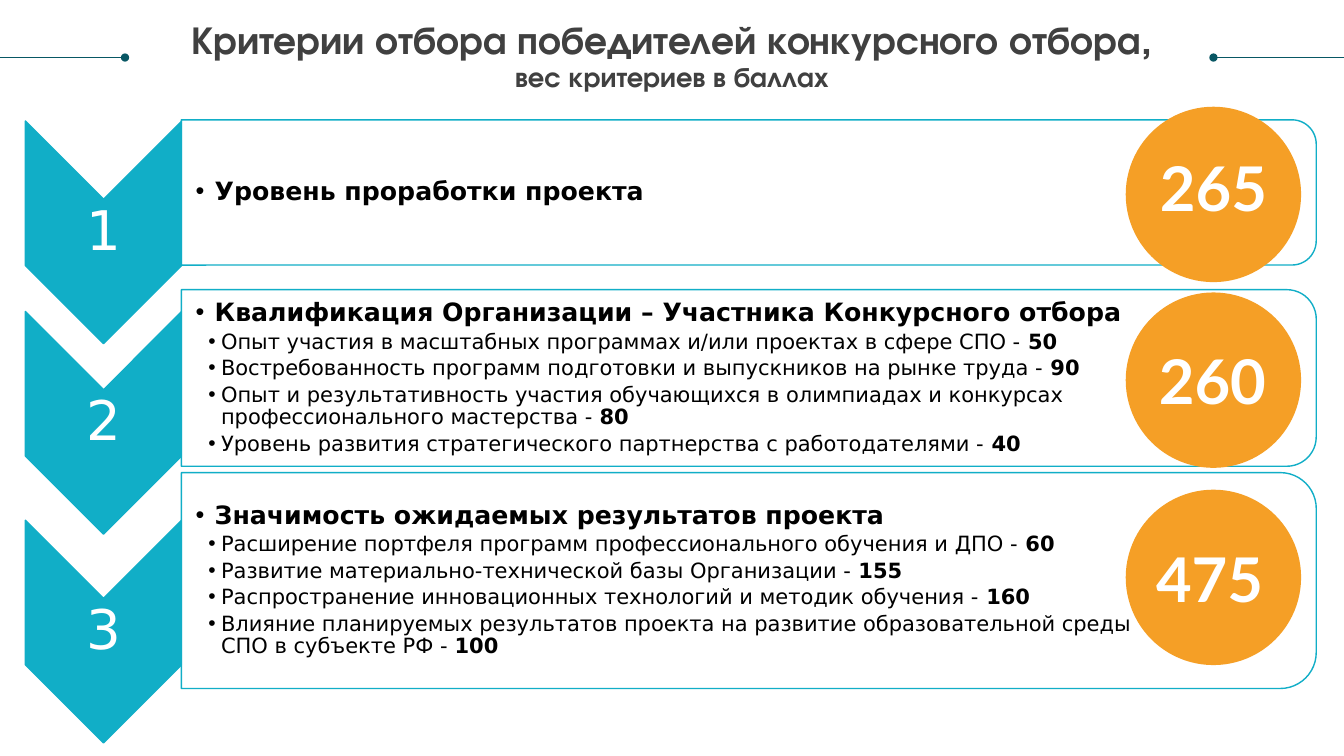
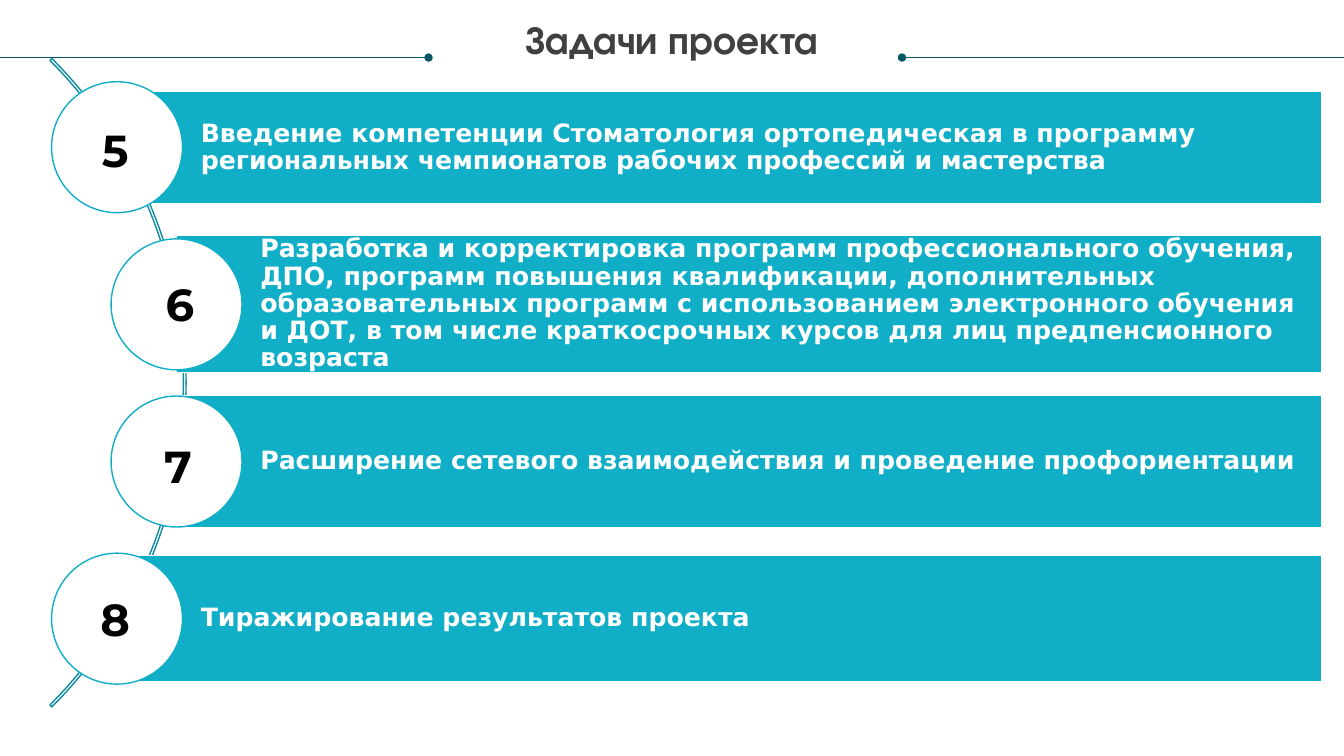
"""Build two slides: contest criteria with scores, and project tasks."""
from dataclasses import dataclass

from lxml import etree
from pptx import Presentation
from pptx.dml.color import RGBColor
from pptx.enum.shapes import MSO_CONNECTOR, MSO_SHAPE
from pptx.enum.text import MSO_ANCHOR, MSO_AUTO_SIZE, PP_ALIGN
from pptx.oxml.ns import qn
from pptx.util import Cm, Pt

CHEVRON = MSO_SHAPE.CHEVRON
PANEL = MSO_SHAPE.ROUND_2_SAME_RECTANGLE
OVAL = MSO_SHAPE.OVAL
ARC = MSO_SHAPE.BLOCK_ARC
STRAIGHT = MSO_CONNECTOR.STRAIGHT
TOP, MIDDLE = MSO_ANCHOR.TOP, MSO_ANCHOR.MIDDLE
LEFT, CENTER = PP_ALIGN.LEFT, PP_ALIGN.CENTER
NO_FIT = MSO_AUTO_SIZE.NONE

TEAL, DEEP, DARK = "11AEC7", "0E8B9F", "085764"
ORANGE, GRAY, WHITE, BLACK = "F59F26", "404040", "FFFFFF", "000000"
HEAD, BODY, SCORE, DIGIT = "TeX Gyre Adventor", "DejaVu Sans", "Lato", "Montserrat"

WIDTH, HEIGHT = 33.87, 19.05
RULE_Y = 1.45
ARROW_X, ARROW_W, ARROW_H = 0.64, 3.94, 5.61
PANEL_X, PANEL_W = 4.57, 28.6
DISC_X, DISC_D = 28.37, 4.42
BAR_END = 33.3
RING_D, RING_Y, RING_STEP = 3.3, 2.06, 3.96


@dataclass(frozen=True)
class Box:
    x: float
    y: float
    w: float
    h: float

    def turned(self) -> "Box":
        return Box(self.x + (self.w - self.h) / 2, self.y + (self.h - self.w) / 2, self.h, self.w)


@dataclass(frozen=True)
class Style:
    font: str
    size: float
    color: str
    bold: bool = True


@dataclass(frozen=True)
class Group:
    title: str
    score: str
    arrow_y: float
    top: float
    height: float
    disc_y: float
    score_x: float
    score_y: float
    items: tuple[tuple[str, str], ...] = ()


@dataclass(frozen=True)
class Task:
    digit: str
    text: str
    left: float
    top: float
    height: float
    digit_x: float
    digit_y: float


GROUPS = (
    Group("Уровень проработки проекта", "265", 3.05, 3.02, 3.66, 2.69, 28.68, 3.78),
    Group("Квалификация Организации – Участника Конкурсного отбора", "260",
          7.85, 7.3, 4.45, 7.37, 28.65, 8.64, (
              ("Опыт участия в масштабных программах и/или проектах в сфере СПО - ", "50"),
              ("Востребованность программ подготовки и выпускников на рынке труда - ", "90"),
              ("Опыт и результативность участия обучающихся в олимпиадах и конкурсах\n"
               "профессионального мастерства - ", "80"),
              ("Уровень развития стратегического партнерства с работодателями - ", "40"))),
    Group("Значимость ожидаемых результатов проекта", "475",
          13.11, 11.91, 5.44, 12.34, 28.58, 13.61, (
              ("Расширение портфеля программ профессионального обучения и ДПО - ", "60"),
              ("Развитие материально-технической базы Организации - ", "155"),
              ("Распространение инновационных технологий и методик обучения - ", "160"),
              ("Влияние планируемых результатов проекта на развитие образовательной среды\n"
               "СПО в субъекте РФ - ", "100"))),
)

TASKS = (
    Task("5", "Введение компетенции Стоматология ортопедическая в программу региональных "
         "чемпионатов рабочих профессий и мастерства", 2.95, 2.31, 2.82, 2.27, 2.95),
    Task("6", "Разработка и корректировка программ профессионального обучения, ДПО, программ "
         "повышения квалификации, дополнительных образовательных программ с использованием "
         "электронного обучения и ДОТ, в том числе краткосрочных курсов для лиц "
         "предпенсионного возраста", 4.45, 5.94, 3.45, 3.9, 6.83),
    Task("7", "Расширение сетевого взаимодействия и проведение профориентации",
         4.45, 9.96, 3.35, 3.85, 10.92),
    Task("8", "Тиражирование результатов проекта", 2.95, 14, 3.18, 2.27, 14.78),
)


def tint(target, color: str) -> None:
    target.solid()
    target.fore_color.rgb = RGBColor.from_string(color)


def place(shape, box: Box) -> None:
    shape.left, shape.top = Cm(box.x), Cm(box.y)
    shape.width, shape.height = Cm(box.w), Cm(box.h)


def frame(shape, anchor, left: float = 0, pad: float = 0):
    text = shape.text_frame
    text.word_wrap = True
    text.auto_size = NO_FIT
    text.vertical_anchor = anchor
    text.margin_left = Cm(left)
    text.margin_top = text.margin_right = text.margin_bottom = Cm(pad)
    return text


def dress(para, style: Style, align=LEFT, spacing: float = 0.9, after: float = 0) -> None:
    para.alignment = align
    para.line_spacing = spacing
    para.space_before, para.space_after = Pt(0), Pt(after)
    font = para.font
    font.name, font.size, font.bold = style.font, Pt(style.size), style.bold
    font.color.rgb = RGBColor.from_string(style.color)


def bullet(para, margin: float, hang: float) -> None:
    props = para._p.get_or_add_pPr()
    props.set("marL", str(Cm(margin)))
    props.set("indent", str(-Cm(hang)))
    mark = etree.Element(qn("a:buChar" if hang else "a:buNone"))
    if hang:
        mark.set("char", "•")
    font = props.find(qn("a:defRPr"))
    font.addprevious(mark)


def draw(slide, kind, box: Box, fill: str | None = None, line: str | None = None,
         turn: bool = False):
    spot = box.turned() if turn else box
    shape = slide.shapes.add_shape(kind, Cm(spot.x), Cm(spot.y), Cm(spot.w), Cm(spot.h))
    shape.shadow.inherit = False
    if turn:
        shape.rotation = 90
    if fill:
        tint(shape.fill, fill)
    else:
        shape.fill.background()
    if line:
        tint(shape.line.fill, line)
        shape.line.width = Pt(1)
    else:
        shape.line.fill.background()
    return shape


def label(slide, text: str, box: Box, style: Style, spacing: float = 1) -> None:
    area = slide.shapes.add_textbox(Cm(box.x), Cm(box.y), Cm(box.w), Cm(box.h))
    para = frame(area, MIDDLE).paragraphs[0]
    para.text = text
    dress(para, style, CENTER, spacing)


def lift(shape) -> None:
    shape.element.getparent().append(shape.element)


def rule(slide, edge: float, dot: float) -> None:
    line = slide.shapes.add_connector(STRAIGHT, Cm(edge), Cm(RULE_Y), Cm(dot), Cm(RULE_Y))
    tint(line.line.fill, DARK)
    line.line.width = Pt(0.5)
    props = line.element.spPr
    etree.SubElement(props.find(qn("a:ln")), qn("a:tailEnd"), type="oval")
    etree.SubElement(props, qn("a:effectLst"))


def start(deck, lines: tuple[tuple[str, int], ...], left: float, right: float):
    slide = deck.slides.add_slide(deck.slide_layouts.get_by_name("Comparison"))
    title = slide.shapes.title
    place(title, Box(0.64, 0.53, 32.59, 1.07 * len(lines)))
    text = frame(title, TOP)
    for spot, (words, size) in enumerate(lines):
        para = text.add_paragraph() if spot else text.paragraphs[0]
        para.text = words
        dress(para, Style(HEAD, size, GRAY), CENTER)
    rule(slide, 0, left)
    rule(slide, WIDTH, right)
    return slide, [hold for hold in slide.placeholders if hold.placeholder_format.idx]


def fill_list(hold, group: Group) -> None:
    text = frame(hold, MIDDLE, 0.36, 0.03)
    para = text.paragraphs[0]
    para.text = group.title
    dress(para, Style(BODY, 18, BLACK), after=2.7)
    bullet(para, 0.48, 0.48)
    for words, score in group.items:
        para = text.add_paragraph()
        para.level = 1
        for spot, part in enumerate(words.split("\n")):
            if spot:
                para.add_line_break()
            para.add_run().text = part
        run = para.add_run()
        run.text = score
        run.font.bold = True
        dress(para, Style(BODY, 15, BLACK, False), after=2.7)
        bullet(para, 0.64, 0.32)


def add_group(slide, hold, number: int, group: Group) -> None:
    arrow = Box(ARROW_X, group.arrow_y, ARROW_W, ARROW_H)
    draw(slide, CHEVRON, arrow, TEAL, TEAL, True)
    label(slide, str(number), arrow, Style(BODY, 39, WHITE, False), 0.9)
    panel = draw(slide, PANEL, Box(PANEL_X, group.top, PANEL_W, group.height), WHITE, TEAL, True)
    color = panel.element.spPr.find(qn("a:solidFill")).find(qn("a:srgbClr"))
    etree.SubElement(color, qn("a:alpha"), val="90000")
    inset = group.height * 0.05
    place(hold, Box(PANEL_X, group.top + inset, PANEL_W - inset, group.height - 2 * inset))
    fill_list(hold, group)
    lift(hold)
    draw(slide, OVAL, Box(DISC_X, group.disc_y, DISC_D, DISC_D), ORANGE)
    label(slide, group.score, Box(group.score_x, group.score_y, 3.81, 1.88),
          Style(SCORE, 44, WHITE))


def add_task(slide, hold, row: int, task: Task) -> None:
    place(hold, Box(task.left, task.top, BAR_END - task.left, task.height))
    tint(hold.fill, TEAL)
    tint(hold.line.fill, WHITE)
    hold.line.width = Pt(1)
    para = frame(hold, MIDDLE, 2.11, 0.13).paragraphs[0]
    para.text = task.text
    dress(para, Style(BODY, 18, WHITE))
    bullet(para, 0, 0)
    lift(hold)
    ring = Box(task.left - RING_D / 2, RING_Y + row * RING_STEP, RING_D, RING_D)
    draw(slide, OVAL, ring, WHITE, TEAL)
    label(slide, task.digit, Box(task.digit_x, task.digit_y, 1.27, 1.63),
          Style(DIGIT, 32, BLACK))


def main() -> None:
    deck = Presentation()
    deck.slide_width, deck.slide_height = Cm(WIDTH), Cm(HEIGHT)

    slide, holds = start(deck, (("Критерии отбора победителей конкурсного отбора,", 28),
                                ("вес критериев в баллах", 20)), 3.15, 30.58)
    for number, (hold, group) in enumerate(zip(holds, GROUPS), 1):
        add_group(slide, hold, number, group)
    for hold in holds[len(GROUPS):]:
        hold.element.getparent().remove(hold.element)

    slide, holds = start(deck, (("Задачи проекта", 28),), 10.8, 22.73)
    arc = draw(slide, ARC, Box(-18.42, -1.91, 23.11, 23.11), line=DEEP)
    for spot, value in enumerate((189, 27, 0.003)):
        arc.adjustments[spot] = value
    for row, (hold, task) in enumerate(zip(holds, TASKS)):
        add_task(slide, hold, row, task)

    deck.save("out.pptx")


if __name__ == "__main__":
    main()
